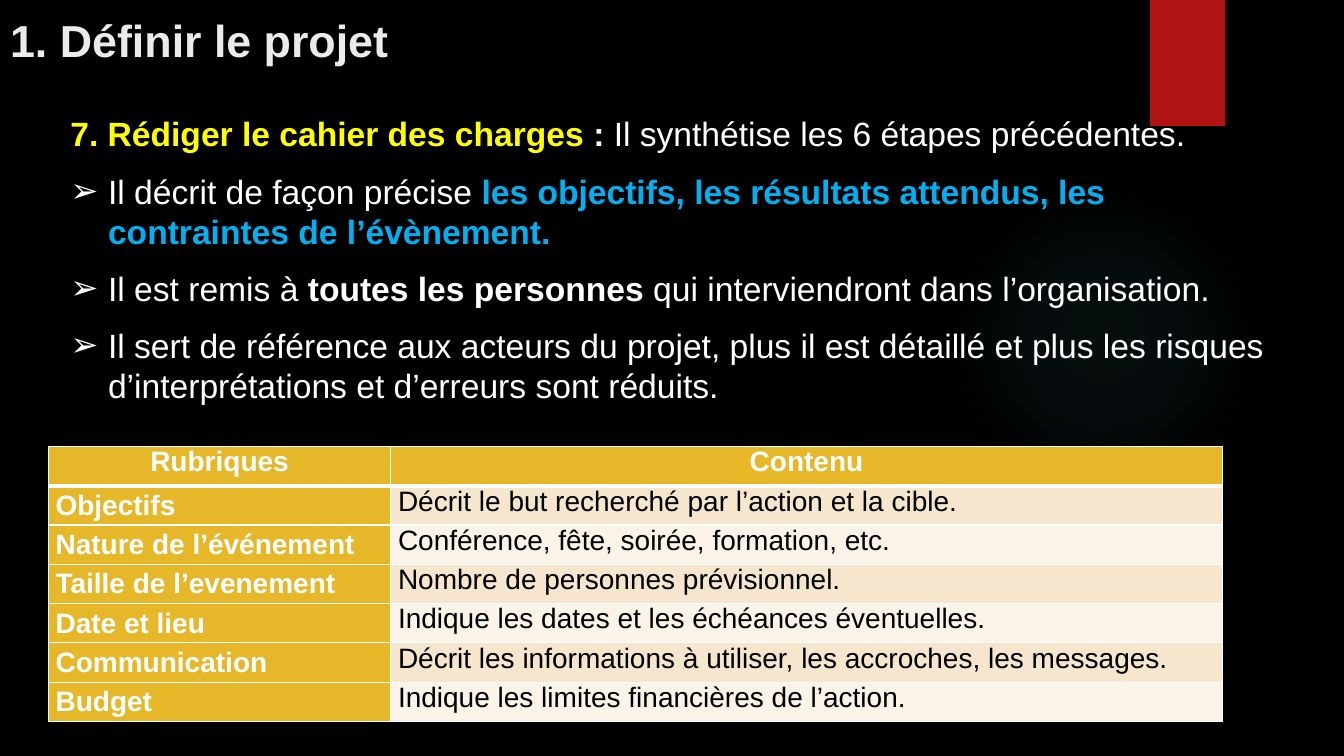
"""Build the slide on writing the specifications of an event project."""
from lxml.etree import SubElement
from pptx import Presentation
from pptx.dml.color import RGBColor
from pptx.enum.shapes import MSO_SHAPE
from pptx.enum.text import MSO_ANCHOR, MSO_AUTO_SIZE, PP_ALIGN
from pptx.oxml import parse_xml
from pptx.oxml.ns import nsdecls, qn
from pptx.util import Cm, Pt

BLACK = RGBColor(0x00, 0x00, 0x00)
WHITE = RGBColor(0xFF, 0xFF, 0xFF)
OFF_WHITE = RGBColor(0xEB, 0xEB, 0xEB)
YELLOW = RGBColor(0xFF, 0xFF, 0x00)
BLUE = RGBColor(0x00, 0xB0, 0xF0)
RED = RGBColor(0xB0, 0x15, 0x13)
TEAL = RGBColor(0x50, 0xB9, 0xC1)
GOLD = RGBColor(0xE6, 0xB7, 0x29)
BANDS = [RGBColor(0xF5, 0xE6, 0xCD), RGBColor(0xFA, 0xF3, 0xE8)]
FONT = "Arial"

TITLE = "1. Définir le projet"
BODY = [
    (None, [("7. Rédiger le cahier des charges ", YELLOW, True), (": ", WHITE, True),
            ("Il synthétise les 6 étapes précédentes.", WHITE, False)]),
    ("➢", [("Il décrit de façon précise ", WHITE, False),
           ("les objectifs, les résultats attendus, les contraintes de l’évènement.", BLUE, True)]),
    ("➢", [("Il est remis à ", WHITE, False), ("toutes les personnes ", WHITE, True),
           ("qui interviendront dans l’organisation.", WHITE, False)]),
    ("➢", [("Il sert de référence aux acteurs du projet, plus il est détaillé et plus les "
            "risques d’interprétations et d’erreurs sont réduits.", WHITE, False)]),
]
ROWS = [
    ("Rubriques", "Contenu"),
    ("Objectifs", "Décrit le but recherché par l’action et la cible."),
    ("Nature de l’événement", "Conférence, fête, soirée, formation, etc."),
    ("Taille de l’evenement", "Nombre de personnes prévisionnel."),
    ("Date et lieu", "Indique les dates et les échéances éventuelles."),
    ("Communication", "Décrit les informations à utiliser, les accroches, les messages."),
    ("Budget", "Indique les limites financières de l’action."),
]
COLUMNS = [Cm(8.63), Cm(20.95)]
ROW_HEIGHT = Cm(0.99)
GLOW_STOPS = [(0, 7), (36, 6), (69, 0)]


def add_run(p, text, size, color, bold):
    r = p.add_run()
    r.text = text
    r.font.name = FONT
    r.font.size = Pt(size)
    r.font.bold = bold
    r.font.color.rgb = color


def add_decor(s, shape, left, top, width, height, color):
    sp = s.shapes.add_shape(shape, left, top, width, height)
    sp.shadow.inherit = False
    sp.fill.solid()
    sp.fill.fore_color.rgb = color
    sp.line.fill.background()
    return sp


def add_glow(sp):
    stops = "".join(
        f'<a:gs pos="{pos * 1000}"><a:srgbClr val="{TEAL}">'
        f'<a:alpha val="{alpha * 1000}"/></a:srgbClr></a:gs>'
        for pos, alpha in GLOW_STOPS)
    gradient = parse_xml(
        f'<a:gradFill {nsdecls("a")}><a:gsLst>{stops}</a:gsLst><a:path path="circle">'
        '<a:fillToRect l="50000" t="50000" r="50000" b="50000"/></a:path></a:gradFill>')
    solid = sp.element.spPr.find(qn("a:solidFill"))
    solid.getparent().replace(solid, gradient)


def place(sp, left, top, width, height, anchor):
    sp.left, sp.top, sp.width, sp.height = left, top, width, height
    tf = sp.text_frame
    tf.word_wrap = True
    tf.auto_size = MSO_AUTO_SIZE.NONE
    tf.vertical_anchor = anchor
    sp.element.getparent().append(sp.element)
    return tf


def set_bullet(p, bullet):
    pPr = p._p.get_or_add_pPr()
    indent = Cm(0.95) if bullet else 0
    pPr.set("marL", str(indent))
    pPr.set("indent", str(-indent))
    if bullet:
        SubElement(pPr, qn("a:buFont"), typeface=FONT)
        SubElement(pPr, qn("a:buChar"), char=bullet)
    else:
        SubElement(pPr, qn("a:buNone"))


def set_borders(cell, row):
    widths = {"L": 1, "R": 1, "T": 3 if row == 1 else 1, "B": 3 if row == 0 else 1}
    tcPr = cell._tc.get_or_add_tcPr()
    for i, (side, width) in enumerate(widths.items()):
        tcPr.insert(i, parse_xml(
            f'<a:ln{side} {nsdecls("a")} w="{Pt(width)}"><a:solidFill>'
            f'<a:srgbClr val="{WHITE}"/></a:solidFill></a:ln{side}>'))


def fill_cell(cell, text, row, col):
    heading = row == 0 or col == 0
    cell.margin_left = cell.margin_right = Cm(0.18)
    cell.margin_top = cell.margin_bottom = 0
    cell.vertical_anchor = MSO_ANCHOR.MIDDLE if row and col == 0 else MSO_ANCHOR.TOP
    cell.fill.solid()
    cell.fill.fore_color.rgb = GOLD if heading else BANDS[(row - 1) % 2]
    set_borders(cell, row)
    p = cell.text_frame.paragraphs[0]
    p.alignment = PP_ALIGN.LEFT if row else PP_ALIGN.CENTER
    p.space_after = Pt(2 if row else 3)
    add_run(p, text, 20, WHITE if heading else BLACK, heading)


def add_rubrics(s):
    frame = s.shapes.add_table(len(ROWS), len(COLUMNS), Cm(1.22), Cm(11.25),
                               sum(COLUMNS), ROW_HEIGHT * len(ROWS))
    table = frame.table
    for column, width in zip(table.columns, COLUMNS):
        column.width = width
    for i, texts in enumerate(ROWS):
        table.rows[i].height = ROW_HEIGHT
        for j, text in enumerate(texts):
            fill_cell(table.cell(i, j), text, i, j)


def main():
    prs = Presentation()
    prs.slide_width, prs.slide_height = Cm(33.87), Cm(19.05)
    s = prs.slides.add_slide(prs.slide_layouts[1])
    s.background.fill.solid()
    s.background.fill.fore_color.rgb = BLACK

    glow = add_decor(s, MSO_SHAPE.OVAL, Cm(23.9), Cm(4.65), Cm(7.82), Cm(7.82), TEAL)
    add_glow(glow)
    add_decor(s, MSO_SHAPE.RECTANGLE, Cm(28.98), 0, Cm(1.9), Cm(3.18), RED)

    tf = place(s.shapes.title, 0, Cm(0.13), Cm(30.96), Cm(1.68), MSO_ANCHOR.BOTTOM)
    p = tf.paragraphs[0]
    p.alignment = PP_ALIGN.LEFT
    add_run(p, TITLE, 32, OFF_WHITE, True)

    add_rubrics(s)

    tf = place(s.placeholders[1], Cm(1.52), Cm(2.69), Cm(30.61), Cm(7.7), MSO_ANCHOR.MIDDLE)
    for i, (bullet, runs) in enumerate(BODY):
        p = tf.add_paragraph() if i else tf.paragraphs[0]
        set_bullet(p, bullet)
        p.space_before = Pt(12 if i else 0)
        for text, color, bold in runs:
            add_run(p, text, 24, color, bold)

    prs.save("out.pptx")


if __name__ == "__main__":
    main()
